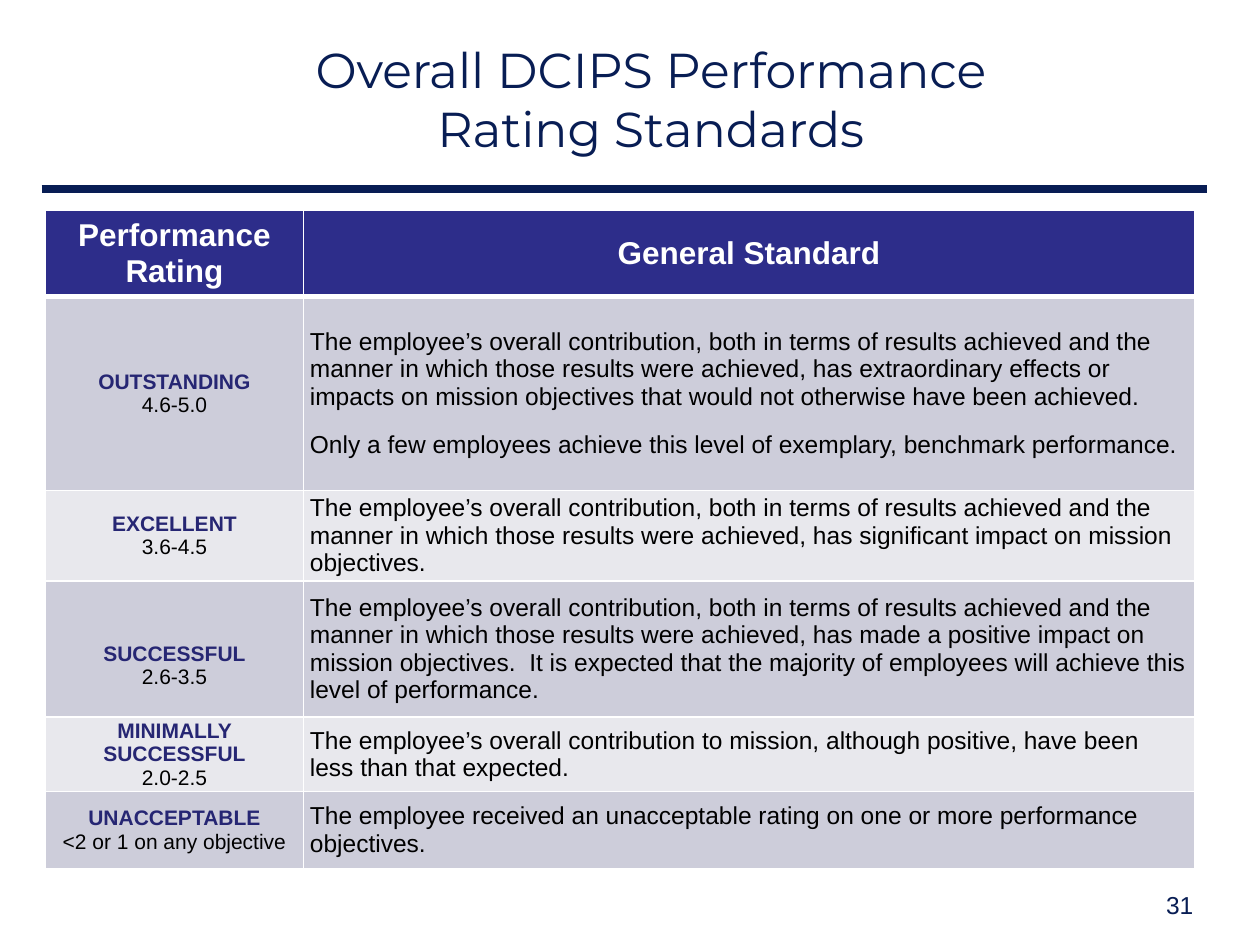
import pptx
import pptx.dml.color
import pptx.enum.shapes
import pptx.enum.text
import pptx.oxml
import pptx.oxml.ns
import pptx.util

RGBColor = pptx.dml.color.RGBColor
ALIGN = pptx.enum.text.PP_ALIGN
MIDDLE = pptx.enum.text.MSO_ANCHOR.MIDDLE
Inches, Pt = pptx.util.Inches, pptx.util.Pt

NAVY = RGBColor(0x08, 0x1D, 0x54)
HEADER_BLUE = RGBColor(0x2D, 0x2D, 0x8A)
RATING_BLUE = RGBColor(0x26, 0x26, 0x73)
BANDS = RGBColor(0xCD, 0xCD, 0xDA), RGBColor(0xE8, 0xE8, 0xED)
WHITE = RGBColor(0xFF, 0xFF, 0xFF)
BLACK = RGBColor(0, 0, 0)

WIDTH, HEIGHT = Inches(10), Inches(7.5)
COLUMN_WIDTHS = 2.05, 7.07
ROW_HEIGHTS = 0.68, 1.54, 0.72, 1.08, 0.59, 0.61
LOWERED_RATING = "SUCCESSFUL"

CONTRIBUTION = ("The employee’s overall contribution, both in terms of results achieved "
                "and the manner in which those results were achieved, has ")
HEADINGS = "Performance Rating", "General Standard"
STANDARDS = [
    ("OUTSTANDING", "4.6-5.0", [
        CONTRIBUTION + "extraordinary effects or impacts on mission objectives that would "
        "not otherwise have been achieved.",
        "Only a few employees achieve this level of exemplary, benchmark performance."]),
    ("EXCELLENT", "3.6-4.5", [
        CONTRIBUTION + "significant impact on mission objectives."]),
    ("SUCCESSFUL", "2.6-3.5", [
        CONTRIBUTION + "made a positive impact on mission objectives.  It is expected that "
        "the majority of employees will achieve this level of performance."]),
    ("MINIMALLY SUCCESSFUL", "2.0-2.5", [
        "The employee’s overall contribution to mission, although positive, have been "
        "less than that expected."]),
    ("UNACCEPTABLE", "<2 or 1 on any objective", [
        "The employee received an unacceptable rating on one or more performance "
        "objectives."]),
]


class SlideBuilder:
    """Holds the style and the current slide; places are shares of the slide's size."""

    heading_font = "Montserrat"
    body_font = "Arial"

    def __init__(self, slide):
        self.slide = slide

    def box(self, left, top, width, height):
        return (int(left * WIDTH), int(top * HEIGHT),
                int(width * WIDTH), int(height * HEIGHT))

    def set_text(self, paragraph, text, size, color, bold=False, align=ALIGN.LEFT, font=None):
        paragraph.text = text
        paragraph.alignment = align
        for run in paragraph.runs:
            run.font.name = font or self.body_font
            run.font.size = Pt(size)
            run.font.bold = bold
            run.font.color.rgb = color

    def title(self, text, *place):
        title = self.slide.shapes.title
        title.left, title.top, title.width, title.height = self.box(*place)
        frame = title.text_frame
        frame.word_wrap = True
        frame.vertical_anchor = MIDDLE
        self.set_text(frame.paragraphs[0], text, 28, NAVY, align=ALIGN.CENTER,
                      font=self.heading_font)

    def rule(self, left, right, y):
        line = self.slide.shapes.add_connector(
            pptx.enum.shapes.MSO_CONNECTOR.STRAIGHT,
            int(left * WIDTH), int(y * HEIGHT), int(right * WIDTH), int(y * HEIGHT))
        line.line.color.rgb = NAVY
        line.line.width = Pt(4.5)
        properties = line._element.spPr
        properties.append(properties.makeelement(pptx.oxml.ns.qn("a:effectLst"), {}))

    def page_number(self, number, *place):
        frame = self.slide.shapes.add_textbox(*self.box(*place)).text_frame
        frame.word_wrap = True
        self.set_text(frame.paragraphs[0], number, 14, NAVY, align=ALIGN.RIGHT)

    def borders(self, cell, top=1, bottom=1):
        properties = cell._tc.get_or_add_tcPr()
        for side, points in (("L", 1), ("R", 1), ("T", top), ("B", bottom)):
            properties.append(pptx.oxml.parse_xml(
                f'<a:ln{side} {pptx.oxml.ns.nsdecls("a")} w="{Pt(points)}"><a:solidFill>'
                f'<a:srgbClr val="{WHITE}"/></a:solidFill></a:ln{side}>'))

    def cell(self, cell, fill, **borders):
        """Style a cell and return its text frame."""
        self.borders(cell, **borders)
        cell.fill.solid()
        cell.fill.fore_color.rgb = fill
        cell.vertical_anchor = MIDDLE
        cell.margin_left = cell.margin_right = Inches(0.05)
        cell.margin_top = cell.margin_bottom = 0
        return cell.text_frame

    def rating(self, frame, name, scores):
        self.set_text(frame.paragraphs[0], name, 12, RATING_BLUE, True, ALIGN.CENTER)
        self.set_text(frame.add_paragraph(), scores, 12, BLACK, align=ALIGN.CENTER)

    def standard(self, frame, texts):
        for index, text in enumerate(texts):
            paragraph = frame.add_paragraph() if index else frame.paragraphs[0]
            self.set_text(paragraph, text, 14, BLACK)
            if index:
                paragraph.space_before = Pt(12)

    def standards_table(self, left, top):
        table = self.slide.shapes.add_table(
            len(ROW_HEIGHTS), len(COLUMN_WIDTHS), int(left * WIDTH), int(top * HEIGHT),
            Inches(sum(COLUMN_WIDTHS)), Inches(sum(ROW_HEIGHTS))).table
        for column, width in zip(table.columns, COLUMN_WIDTHS):
            column.width = Inches(width)
        for row, height in zip(table.rows, ROW_HEIGHTS):
            row.height = Inches(height)
        for column, heading in enumerate(HEADINGS):
            frame = self.cell(table.cell(0, column), HEADER_BLUE, bottom=3)
            self.set_text(frame.paragraphs[0], heading, 18, WHITE, True, ALIGN.CENTER)
        for row, (name, scores, texts) in enumerate(STANDARDS, 1):
            band = BANDS[(row - 1) % 2]
            top_border = 3 if row == 1 else 1
            rating_cell, standard_cell = table.cell(row, 0), table.cell(row, 1)
            self.rating(self.cell(rating_cell, band, top=top_border), name, scores)
            self.standard(self.cell(standard_cell, band, top=top_border), texts)
            if name == LOWERED_RATING:
                rating_cell.margin_top = Inches(0.26)


def main():
    deck = pptx.Presentation()
    deck.slide_width, deck.slide_height = WIDTH, HEIGHT
    builder = SlideBuilder(deck.slides.add_slide(deck.slide_layouts.get_by_name("Title Only")))
    builder.rule(0.033, 0.958, 0.2)
    builder.title("Overall DCIPS Performance Rating Standards", 0.175, 0.023, 0.683, 0.163)
    builder.standards_table(0.036, 0.223)
    builder.page_number("31", 0.724, 0.935, 0.233, 0.069)
    deck.save("out.pptx")


if __name__ == "__main__":
    main()
